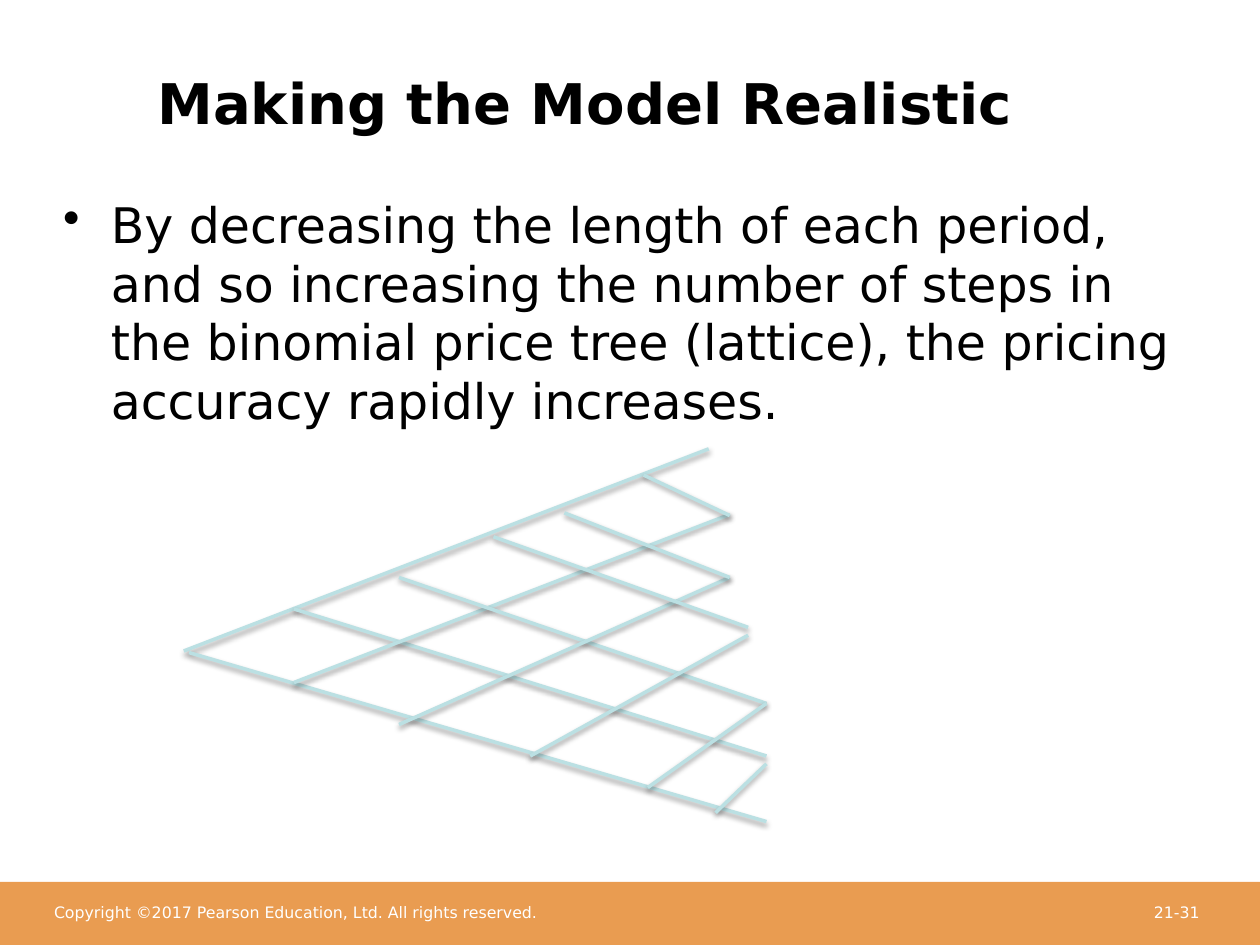
from lxml import etree
from pptx import Presentation
from pptx import util as u
from pptx.dml.color import RGBColor
from pptx.enum import shapes, text
from pptx.oxml.ns import qn

COLORS = {"ink": "000000", "paper": "FFFFFF", "band": "E99C51", "lattice": "BBE0E3"}
FONT = "DejaVu Sans"
CELL = u.Inches(1) / 24
COLUMNS, ROWS = 240, 180

BRANCHES = [
    ((0, 39), (100, 0.5)),
    ((1, 39.3), (111, 71.5)),
    ((21, 31), (111, 59)),
    ((21, 45), (104, 13)),
    ((41, 25), (111, 49)),
    ((41, 53), (104, 25)),
    ((59, 17.25), (107.5, 34.5)),
    ((66, 59), (107.5, 36)),
    ((104, 25), (72.5, 12.7)),
    ((104, 13.2), (87.6, 5.5)),
    ((111, 49), (88.4, 65)),
    ((111, 60.5), (101.3, 69.8)),
]


def cells(*counts):
    return [round(count * CELL) for count in counts]


def color(name):
    return RGBColor.from_string(COLORS[name])


def add_text(slide, box, wording, size, ink, bold=False, right_inset=0):
    frame = slide.shapes.add_textbox(*cells(*box)).text_frame
    frame.word_wrap = True
    frame.margin_left = frame.margin_top = frame.margin_bottom = 0
    frame.margin_right = u.Inches(right_inset)
    frame.text = wording
    font = frame.paragraphs[0].runs[0].font
    font.name, font.size, font.bold = FONT, u.Pt(size), bold
    font.color.rgb = color(ink)
    return frame


def add_footer(slide, box):
    left, top, width, height = box
    band = slide.shapes.add_shape(shapes.MSO_SHAPE.RECTANGLE, *cells(*box))
    band.shadow.inherit = False
    band.fill.solid()
    band.fill.fore_color.rgb = color("band")
    band.line.fill.background()
    line_top = top + height / 3
    add_text(slide, (left + 10.3, line_top, 141.6, 4.8),
             "Copyright ©2017 Pearson Education, Ltd. All rights reserved.", 9, "paper")
    number = add_text(slide, (left + width - 23, line_top, 11.5, 8), "21-31", 9, "paper")
    number.paragraphs[0].alignment = text.PP_ALIGN.RIGHT


def add_title(slide, box):
    title = add_text(slide, box, "Making the Model Realistic", 32, "ink", bold=True)
    title.vertical_anchor = text.MSO_ANCHOR.MIDDLE


def add_body(slide, box):
    body = add_text(
        slide, box,
        "By decreasing the length of each period, and so increasing the number of steps in "
        "the binomial price tree (lattice), the pricing accuracy rapidly increases.",
        28, "ink", right_inset=0.1)
    properties = body.paragraphs[0]._p.get_or_add_pPr()
    indent = u.Inches(0.38)
    properties.set("marL", str(indent))
    properties.set("indent", str(-indent))
    etree.SubElement(properties, qn("a:buChar"), char="•")


def add_branch_shadow(branch):
    effects = etree.SubElement(branch._element.spPr, qn("a:effectLst"))
    shadow = etree.SubElement(effects, qn("a:outerShdw"), blurRad="40000",
                              dist="20000", dir="5400000", rotWithShape="0")
    tint = etree.SubElement(shadow, qn("a:srgbClr"), val=COLORS["ink"])
    etree.SubElement(tint, qn("a:alpha"), val="38000")


def add_lattice(slide, box):
    left, top = box[:2]
    for (x1, y1), (x2, y2) in BRANCHES:
        ends = cells(left + x1, top + y1, left + x2, top + y2)
        branch = slide.shapes.add_connector(shapes.MSO_CONNECTOR.STRAIGHT, *ends)
        branch.line.color.rgb = color("lattice")
        branch.line.width = u.Pt(2)
        add_branch_shadow(branch)


def main():
    deck = Presentation()
    deck.slide_width, deck.slide_height = cells(COLUMNS, ROWS)
    slide = deck.slides.add_slide(deck.slide_layouts[6])
    slide.background.fill.solid()
    slide.background.fill.fore_color.rgb = color("paper")
    add_footer(slide, (0, ROWS - 12, COLUMNS, 12))
    add_title(slide, (30, 4.5, 202, 30))
    add_body(slide, (12, 37, 220, 122))
    add_lattice(slide, (35, 85, 111, 72))
    deck.save("out.pptx")


if __name__ == "__main__":
    main()
